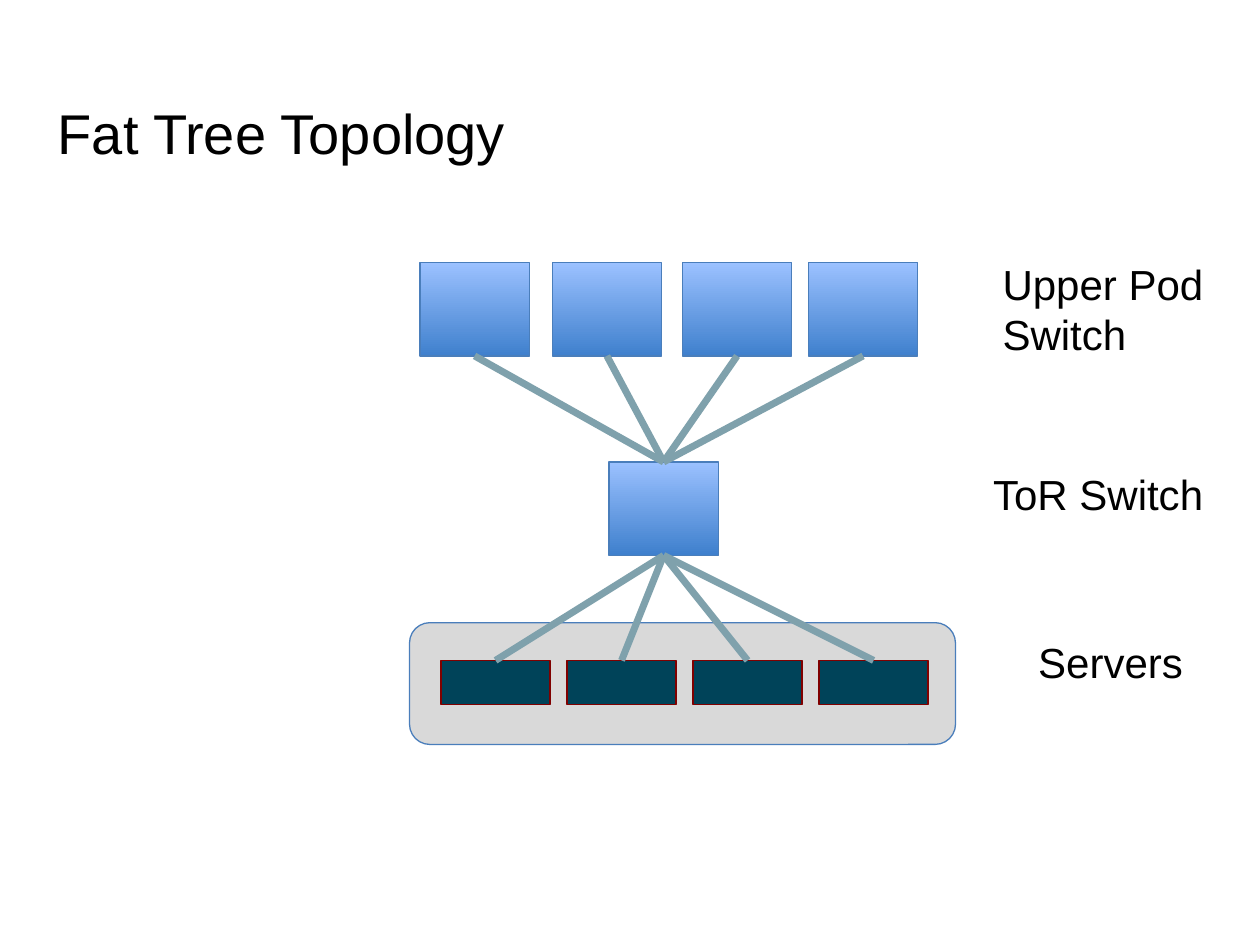
from dataclasses import dataclass

from lxml import etree
from pptx import Presentation
from pptx.dml.color import RGBColor
from pptx.enum.shapes import MSO_CONNECTOR, MSO_SHAPE
from pptx.enum.text import MSO_ANCHOR, MSO_AUTO_SIZE, PP_ALIGN
from pptx.oxml.ns import qn
from pptx.util import Inches, Pt

RECT = MSO_SHAPE.RECTANGLE
ROUND = MSO_SHAPE.ROUNDED_RECTANGLE
LINE = MSO_CONNECTOR.STRAIGHT
MIDDLE = MSO_ANCHOR.MIDDLE
TOP = MSO_ANCHOR.TOP
LEFT = PP_ALIGN.LEFT
GROW = MSO_AUTO_SIZE.SHAPE_TO_FIT_TEXT
COLS, ROWS = 120, 90


@dataclass(frozen=True)
class Theme:
    font: str = "Arial"
    ink: str = "000000"
    light: str = "9BC1FF"
    deep: str = "3F80CD"
    edge: str = "4A7EBB"
    panel: str = "D9D9D9"
    server: str = "004359"
    rim: str = "800000"
    link: str = "7FA1AC"
    head: float = 32
    label: float = 24
    thin: float = 0.75
    thick: float = 4


def color(code):
    return RGBColor.from_string(code)


def write(frame, text, font, size, ink, anchor=TOP, wrap=True):
    frame.text = text
    frame.word_wrap = wrap
    frame.vertical_anchor = anchor
    for para in frame.paragraphs:
        para.alignment = LEFT
        para.font.name = font
        para.font.size = Pt(size)
        para.font.color.rgb = color(ink)


class Sheet:
    def __init__(self, deck, theme):
        self.theme = theme
        self.cell = deck.slide_width / COLS, deck.slide_height / ROWS
        self.slide = deck.slides.add_slide(deck.slide_layouts[5])
        self.shapes = self.slide.shapes

    def place(self, col, row, wide, high):
        x, y = self.cell
        return [round(n) for n in (col * x, row * y, wide * x, high * y)]

    def title(self, text, *area):
        look = self.theme
        box = self.shapes.title
        box.left, box.top, box.width, box.height = self.place(*area)
        write(box.text_frame, text, look.font, look.head, look.ink, MIDDLE)

    def label(self, text, *area):
        look = self.theme
        frame = self.shapes.add_textbox(*self.place(*area)).text_frame
        write(frame, text, look.font, look.label, look.ink, wrap=False)
        frame.auto_size = GROW

    def block(self, area, fill, edge, kind=RECT):
        box = self.shapes.add_shape(kind, *self.place(*area))
        box.shadow.inherit = False
        if fill:
            box.fill.solid()
            box.fill.fore_color.rgb = color(fill)
        else:
            box.fill.gradient()
            box.fill.gradient_angle = 270
            tones = self.theme.light, self.theme.deep
            for stop, tone, spot in zip(box.fill.gradient_stops, tones, (0, 1)):
                stop.color.rgb = color(tone)
                stop.position = spot
        box.line.color.rgb = color(edge)
        box.line.width = Pt(self.theme.thin)
        return box

    def switch(self, col, row):
        return self.block((col, row, 10.4, 8.9), None, self.theme.edge)

    def server(self, col, row):
        return self.block((col, row, 10.4, 4.2), self.theme.server, self.theme.rim)

    def panel(self, *area):
        return self.block(area, self.theme.panel, self.theme.edge, ROUND)

    def link(self, upper, lower):
        wire = self.shapes.add_connector(LINE, 0, 0, 0, 0)
        wire.begin_connect(upper, 2)
        wire.end_connect(lower, 0)
        wire.line.color.rgb = color(self.theme.link)
        wire.line.width = Pt(self.theme.thick)
        etree.SubElement(wire._element.spPr, qn("a:effectLst"))


def main():
    deck = Presentation()
    deck.slide_width, deck.slide_height = Inches(10), Inches(7.5)
    sheet = Sheet(deck, Theme())

    sheet.title("Fat Tree Topology", 4.3, 6, 111.4, 13.1)
    sheet.panel(39, 59.3, 52, 11.6)
    tor = sheet.switch(58, 44)
    pods = [sheet.switch(col, 25) for col in (40, 52.6, 65, 77)]
    servers = [sheet.server(42 + 12 * i, 62.9) for i in range(4)]
    for pod in pods:
        sheet.link(pod, tor)
    for server in servers:
        sheet.link(tor, server)

    sheet.label("Upper Pod\nSwitch", 94.3, 24, 21.7, 10.9)
    sheet.label("ToR Switch", 93.4, 44, 22.7, 6.1)
    sheet.label("Servers", 97.7, 60, 16.3, 6.1)
    deck.save("out.pptx")


if __name__ == "__main__":
    main()
